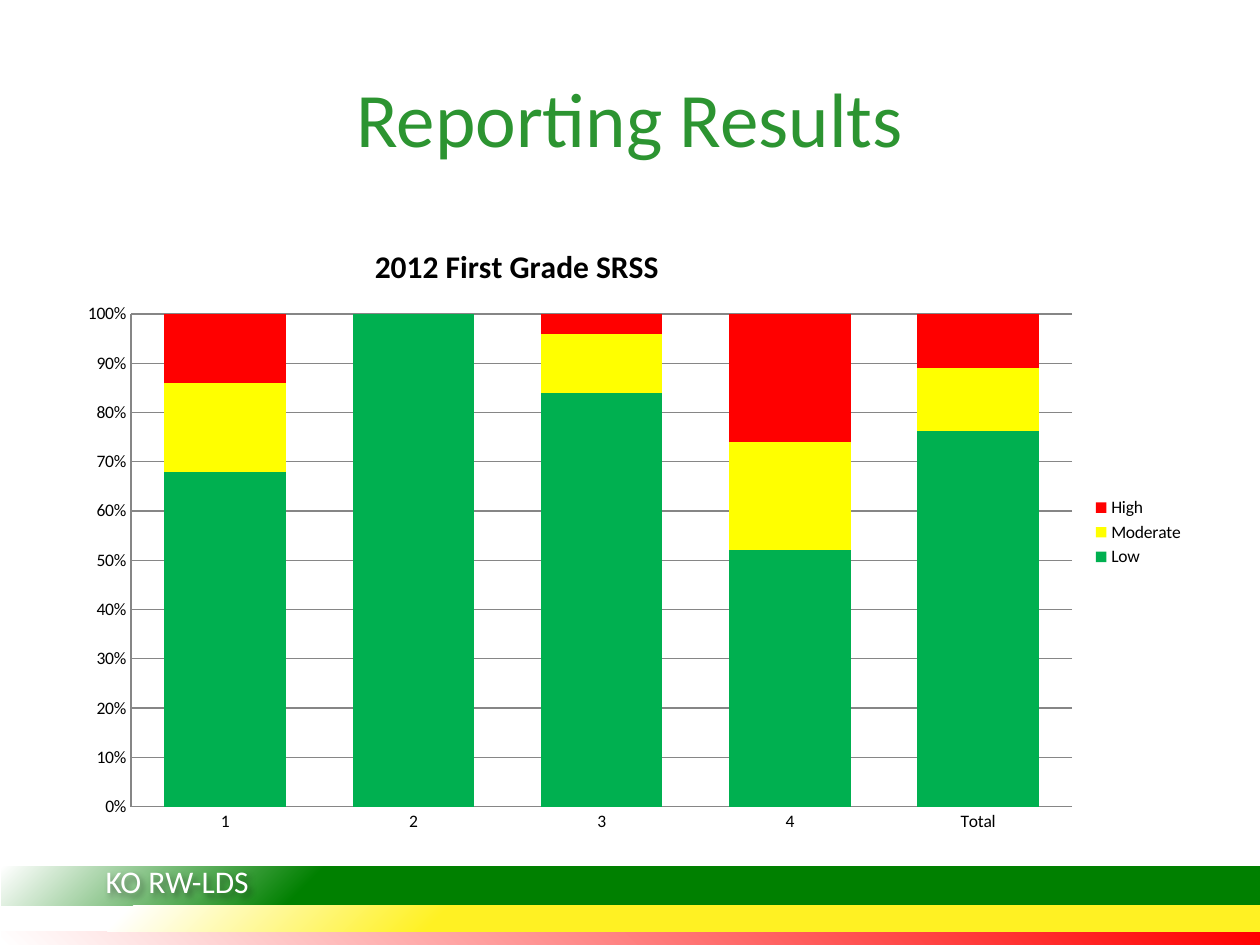
from lxml.etree import SubElement
from pptx import Presentation
from pptx.chart.data import CategoryChartData
from pptx.dml.color import RGBColor
from pptx.enum.chart import XL_CHART_TYPE, XL_LEGEND_POSITION, XL_TICK_MARK
from pptx.enum.shapes import MSO_SHAPE
from pptx.enum.text import MSO_ANCHOR, PP_ALIGN
from pptx.oxml import parse_xml
from pptx.oxml.ns import nsdecls, qn
from pptx.util import Inches, Pt

COLORS = {
    "title": "2C9431", "text": "000000", "white": "FFFFFF", "grid": "868686",
    "low": "00B050", "moderate": "FFFF00", "high": "FF0000",
    "green band": "008000", "yellow band": "FFF123", "red band": "FF0000",
}
CATEGORIES = ["1", "2", "3", "4", "Total"]
SERIES = [
    ("Low ", [68, 100, 84, 52, 77], "low"),
    ("Moderate", [18, 0, 12, 22, 13], "moderate"),
    ("High", [14, 0, 4, 26, 11], "high"),
]
BANDS = [
    ("red band", 7.39, 0.12, (0, 100), "top"),
    ("green band", 6.88, 0.31, (75, 100), "bottom"),
    ("yellow band", 7.19, 0.2, (65, 90), "bottom"),
]


class SlideBuilder:
    """Holds the style and the current slide."""

    font_name = "Calibri"

    def __init__(self, slide):
        self.slide = slide

    def color(self, name):
        return RGBColor.from_string(COLORS[name])

    def style_font(self, font, size, color, bold=False):
        font.name = self.font_name
        font.size = Pt(size)
        font.bold = bold
        font.color.rgb = self.color(color)

    def add_text(self, text, box, size, color, align=PP_ALIGN.LEFT,
                 anchor=MSO_ANCHOR.TOP, shadow=False):
        shape = self.slide.shapes.add_textbox(*map(Inches, box))
        frame = shape.text_frame
        frame.word_wrap = True
        frame.vertical_anchor = anchor
        frame.text = text
        paragraph = frame.paragraphs[0]
        paragraph.alignment = align
        self.style_font(paragraph.runs[0].font, size, color)
        if shadow:
            shape._element.spPr.append(parse_xml(
                f'<a:effectLst {nsdecls("a")}><a:outerShdw blurRad="50800" dist="38100" '
                f'dir="2700000"><a:srgbClr val="{COLORS["text"]}"><a:alpha val="40000"/>'
                '</a:srgbClr></a:outerShdw></a:effectLst>'))

    def add_band(self, color, top, height, stops, focus):
        shape = self.slide.shapes.add_shape(
            MSO_SHAPE.RECTANGLE, Inches(0.01), Inches(top), Inches(10), Inches(height))
        shape.shadow.inherit = False
        shape.line.fill.background()
        start, end = (stop * 1000 for stop in stops)
        top_inset, bottom_inset = (0, 100000) if focus == "top" else (100000, 0)
        gradient = parse_xml(
            f'<a:gradFill {nsdecls("a")} rotWithShape="1"><a:gsLst>'
            f'<a:gs pos="{start}"><a:srgbClr val="{COLORS[color]}"/></a:gs>'
            f'<a:gs pos="{end}"><a:srgbClr val="{COLORS["white"]}"/></a:gs></a:gsLst>'
            f'<a:path path="circle"><a:fillToRect l="100000" t="{top_inset}" r="0" '
            f'b="{bottom_inset}"/></a:path></a:gradFill>')
        shape._element.spPr.find(qn("a:prstGeom")).addnext(gradient)

    def place(self, element, index, **fractions):
        for old_layout in element.findall(qn("c:layout")):
            element.remove(old_layout)
        layout = parse_xml(f'<c:layout {nsdecls("c")}><c:manualLayout/></c:layout>')
        settings = {"xMode": "edge", "yMode": "edge", **fractions}
        if "w" in fractions:
            settings = {"layoutTarget": "inner", **settings}
        for tag, value in settings.items():
            SubElement(layout[0], qn(f"c:{tag}")).set("val", str(value))
        element.insert(index, layout)

    def add_chart(self, title, categories, series, box):
        data = CategoryChartData()
        data.categories = categories
        for name, values, _ in series:
            data.add_series(name, values)
        chart = self.slide.shapes.add_chart(
            XL_CHART_TYPE.COLUMN_STACKED_100, *map(Inches, box), data).chart
        self.style_font(chart.font, 10, "text")

        chart.has_title = True
        chart.chart_title.text_frame.text = title
        heading = chart.chart_title.text_frame.paragraphs[0]
        self.style_font(heading.runs[0].font, 18, "text", bold=True)
        self.place(chart.chart_title._element, 1, x=0.27, y=0.03)
        self.place(chart._chartSpace.chart.plotArea, 0, x=0.06, y=0.15, w=0.83, h=0.79)

        chart.has_legend = True
        chart.legend.position = XL_LEGEND_POSITION.RIGHT
        chart.legend.include_in_layout = False
        plot = chart.plots[0]
        plot.gap_width = 55
        plot.overlap = 100
        plot.vary_by_categories = False
        for column, (_, _, color) in zip(plot.series, series):
            column.format.fill.solid()
            column.format.fill.fore_color.rgb = self.color(color)

        value_axis = chart.value_axis
        value_axis.maximum_scale = 1
        value_axis.major_unit = 0.1
        value_axis.tick_labels.number_format = "0%"
        value_axis.tick_labels.number_format_is_linked = False
        value_axis.has_major_gridlines = True
        for axis in (value_axis, chart.category_axis):
            axis.major_tick_mark = XL_TICK_MARK.NONE
        for line in (value_axis.major_gridlines.format.line,
                     value_axis.format.line, chart.category_axis.format.line):
            line.color.rgb = self.color("grid")
            line.width = Pt(0.75)


def main():
    presentation = Presentation()
    presentation.slide_width = Inches(10)
    presentation.slide_height = Inches(7.5)
    builder = SlideBuilder(presentation.slides.add_slide(presentation.slide_layouts[6]))
    builder.add_text("Reporting Results", (0.5, 0.3, 9, 1.25), 44, "title",
                     PP_ALIGN.CENTER, MSO_ANCHOR.MIDDLE)
    builder.add_chart("2012 First Grade SRSS", CATEGORIES, SERIES, (0.5, 1.75, 9, 4.95))
    for band in BANDS:
        builder.add_band(*band)
    builder.add_text("KO RW-LDS", (0.74, 6.79, 1.92, 0.4), 18, "white", shadow=True)
    presentation.save("out.pptx")


if __name__ == "__main__":
    main()
